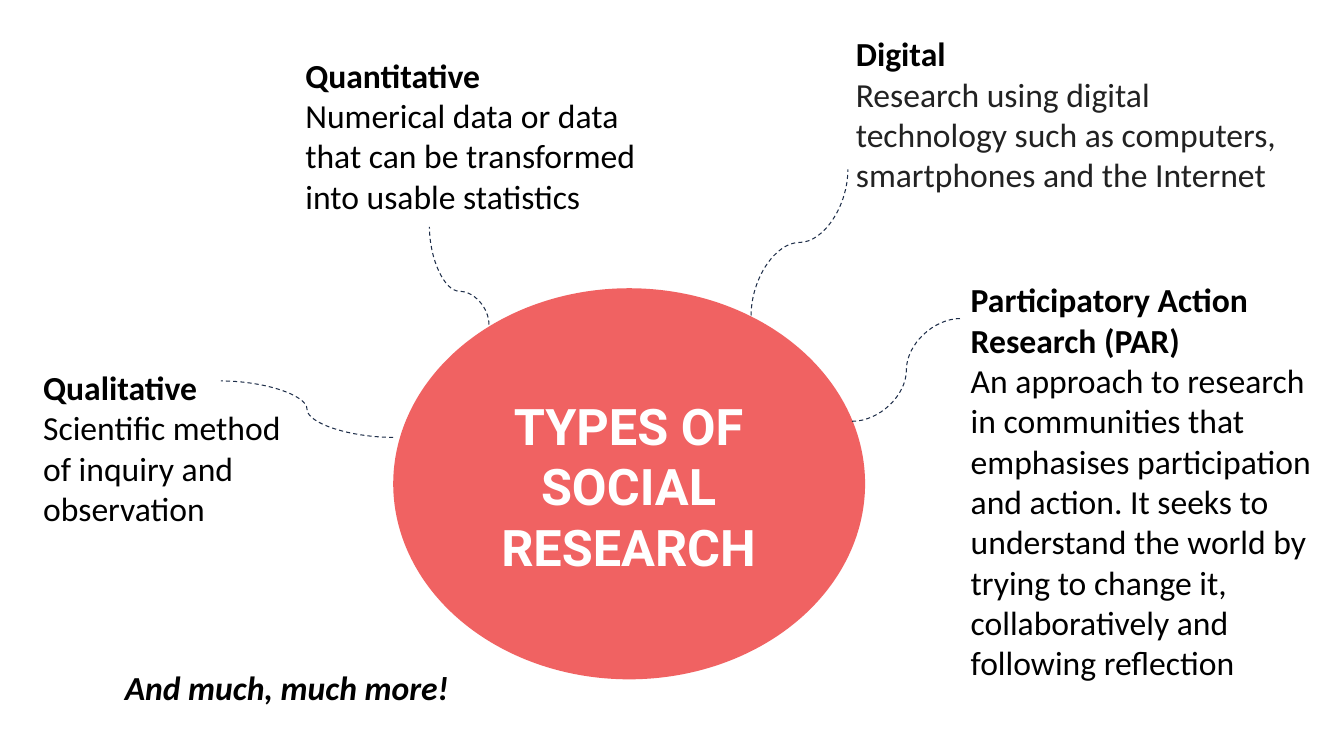
from lxml.etree import SubElement
from pptx import Presentation
from pptx.dml.color import RGBColor
from pptx.enum.dml import MSO_LINE
from pptx.enum.shapes import MSO_CONNECTOR, MSO_SHAPE
from pptx.enum.text import MSO_ANCHOR, MSO_AUTO_SIZE, PP_ALIGN
from pptx.oxml.ns import qn
from pptx.util import Inches, Pt

COLORS = {"coral": "EF4D4D", "white": "FFFFFF", "black": "000000",
          "gray": "222222", "navy": "1E2E49"}


def color(name):
    return RGBColor.from_string(COLORS[name])


def write(frame, text, first=True, size=24, face="Calibri", ink="black",
          bold=False, italic=False, align=PP_ALIGN.LEFT, pad=0.1):
    frame.word_wrap = True
    frame.auto_size = MSO_AUTO_SIZE.NONE
    frame.margin_left = frame.margin_right = Inches(0.1)
    frame.margin_top = frame.margin_bottom = Inches(pad)
    par = frame.paragraphs[0] if first else frame.add_paragraph()
    par.alignment = align
    run = par.add_run()
    run.text = text
    font = run.font
    font.name, font.size = face, Pt(size)
    font.bold, font.italic = bold, italic
    font.color.rgb = color(ink)


deck = Presentation()
deck.slide_width, deck.slide_height = Inches(13.33), Inches(7.5)
slide = deck.slides.add_slide(deck.slide_layouts[5])
shapes = slide.shapes

# Centre oval, placed behind the title
oval = shapes.add_shape(MSO_SHAPE.OVAL, Inches(3.9), Inches(2.86),
                        Inches(4.68), Inches(3.88))
oval.shadow.inherit = False
oval.fill.solid()
oval.fill.fore_color.rgb = color("coral")
tint = oval.fill._xPr.find(".//" + qn("a:srgbClr"))
SubElement(tint, qn("a:alpha"), val="88000")
oval.line.fill.background()
shapes._spTree.insert(2, oval._element)

# Title
title = shapes.title
title.left, title.top = Inches(4.58), Inches(3.61)
title.width, title.height = Inches(3.31), Inches(2.42)
title.text_frame.vertical_anchor = MSO_ANCHOR.MIDDLE
write(title.text_frame, "TYPES OF SOCIAL RESEARCH", size=36, face="Roboto",
      ink="white", bold=True, align=PP_ALIGN.CENTER)

# Research types: left, top, width, height, fill, ink, head, body
types = [
    (8.39, 0.23, 4.68, 2.22, "white", "gray", "Digital",
     "Research using digital technology such as computers, smartphones "
     "and the Internet"),
    (0.33, 3.54, 2.76, 2.22, None, "black", "Qualitative",
     "Scientific method of inquiry and observation"),
    (2.93, 0.44, 3.79, 1.82, None, "black", "Quantitative",
     "Numerical data or data that can be transformed into usable statistics"),
    (9.53, 2.67, 3.64, 4.25, "white", "black",
     "Participatory Action Research (PAR)",
     "An approach to research in communities that emphasises participation "
     "and action. It seeks to understand the world by trying to change it, "
     "collaboratively and following reflection"),
]
for left, top, width, height, fill, ink, head, body in types:
    box = shapes.add_textbox(Inches(left), Inches(top), Inches(width), Inches(height))
    if fill:
        box.fill.solid()
        box.fill.fore_color.rgb = color(fill)
    write(box.text_frame, head, bold=True)
    write(box.text_frame, body, first=False, ink=ink)

# Closing remark
more = shapes.add_textbox(Inches(1.14), Inches(6.57), Inches(4.3), Inches(0.5))
write(more.text_frame, "And much, much more!", bold=True, italic=True, pad=0.05)

# Curved links: start, end, quarter turns clockwise, bend in 1/100000
links = [
    (4.85, 3.22, 4.26, 2.25, 1, 34200),
    (3.9, 4.34, 2.19, 3.78, 0, 50000),
    (7.45, 3.13, 8.41, 1.68, -1, 50000),
    (8.45, 4.18, 9.53, 3.16, 0, 50000),
]
for x1, y1, x2, y2, turn, bend in links:
    if turn:
        # Undo the turn around the middle to get the unrotated ends
        mid_x, mid_y = (x1 + x2) / 2, (y1 + y2) / 2
        dx, dy = turn * (x1 - mid_x), turn * (y1 - mid_y)
        x1, y1, x2, y2 = mid_x + dy, mid_y - dx, mid_x - dy, mid_y + dx
    link = shapes.add_connector(MSO_CONNECTOR.CURVE, Inches(x1), Inches(y1),
                                Inches(x2), Inches(y2))
    link.line.color.rgb = color("navy")
    link.line.width = Pt(0.75)
    link.line.dash_style = MSO_LINE.DASH
    props = link._element.spPr
    SubElement(props, qn("a:effectLst"))
    if turn:
        props.find(qn("a:xfrm")).set("rot", str(turn % 4 * 5400000))
    guides = props.find(".//" + qn("a:avLst"))
    SubElement(guides, qn("a:gd"), name="adj1", fmla=f"val {bend}")

deck.save("out.pptx")
